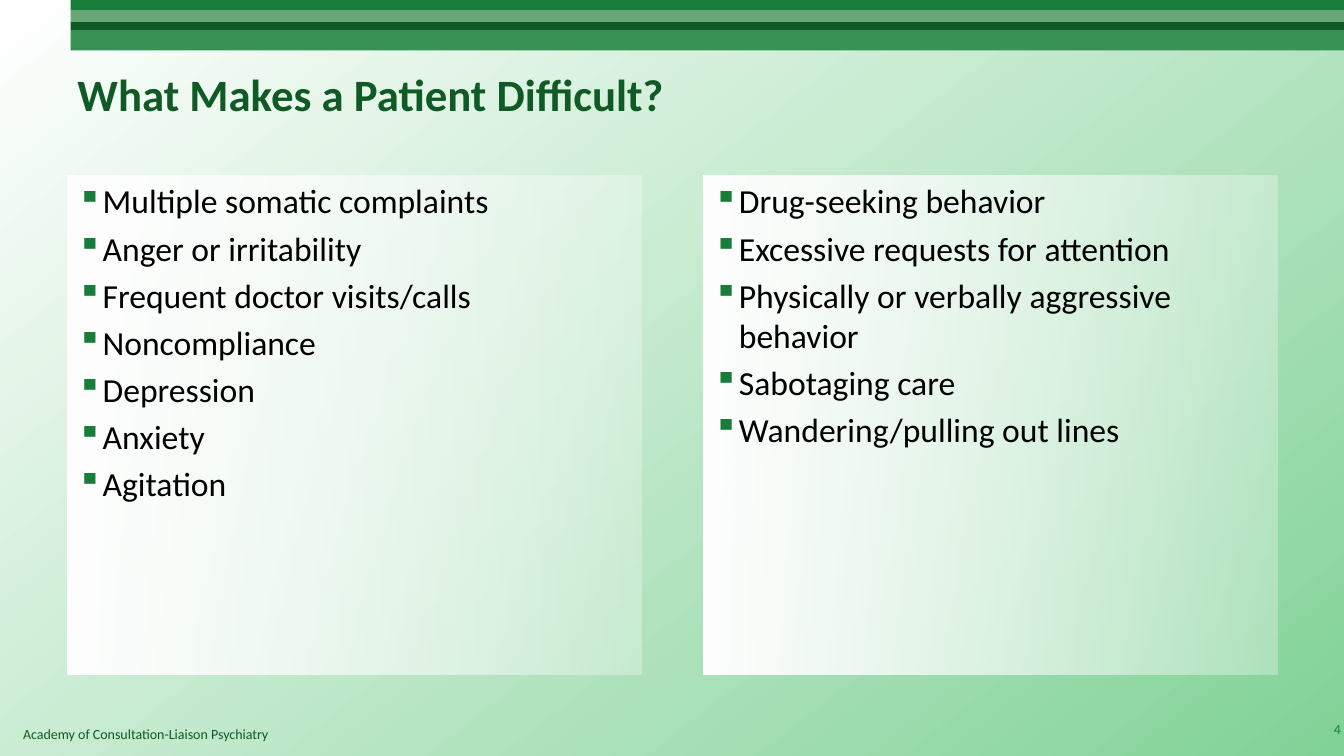
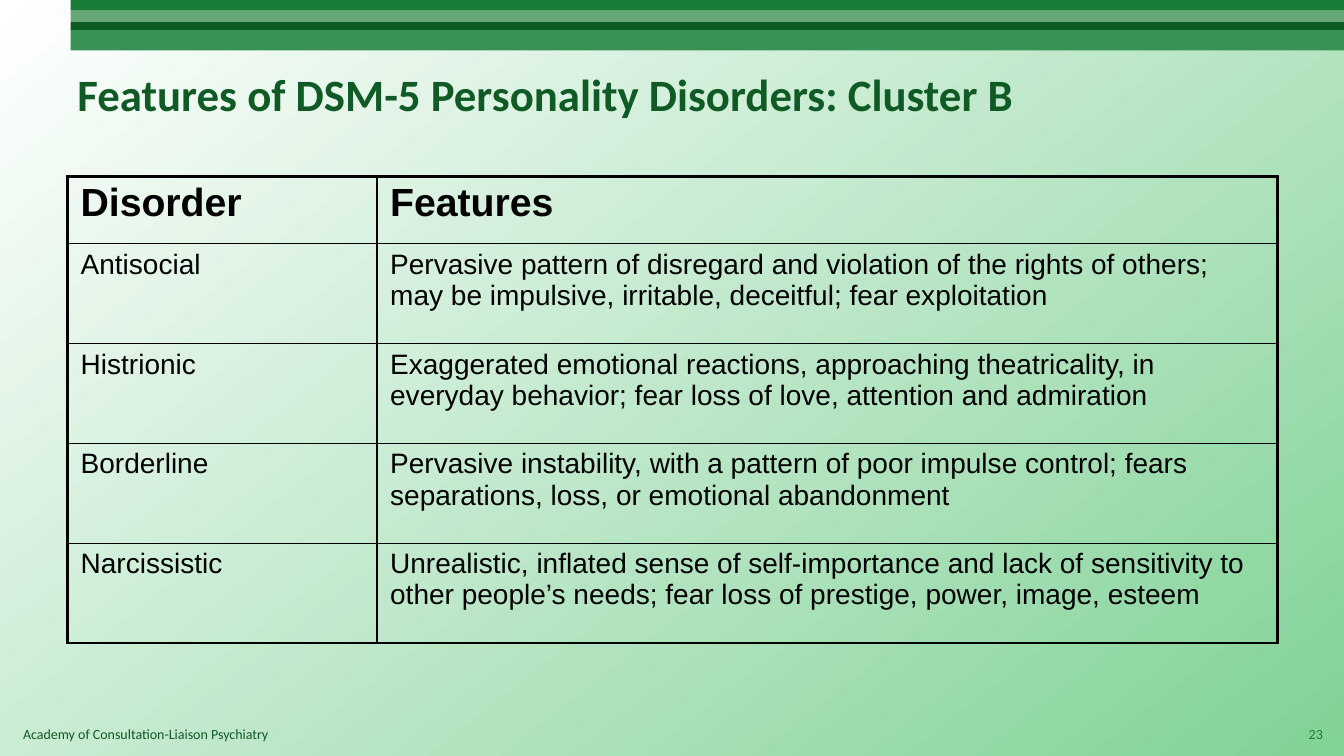
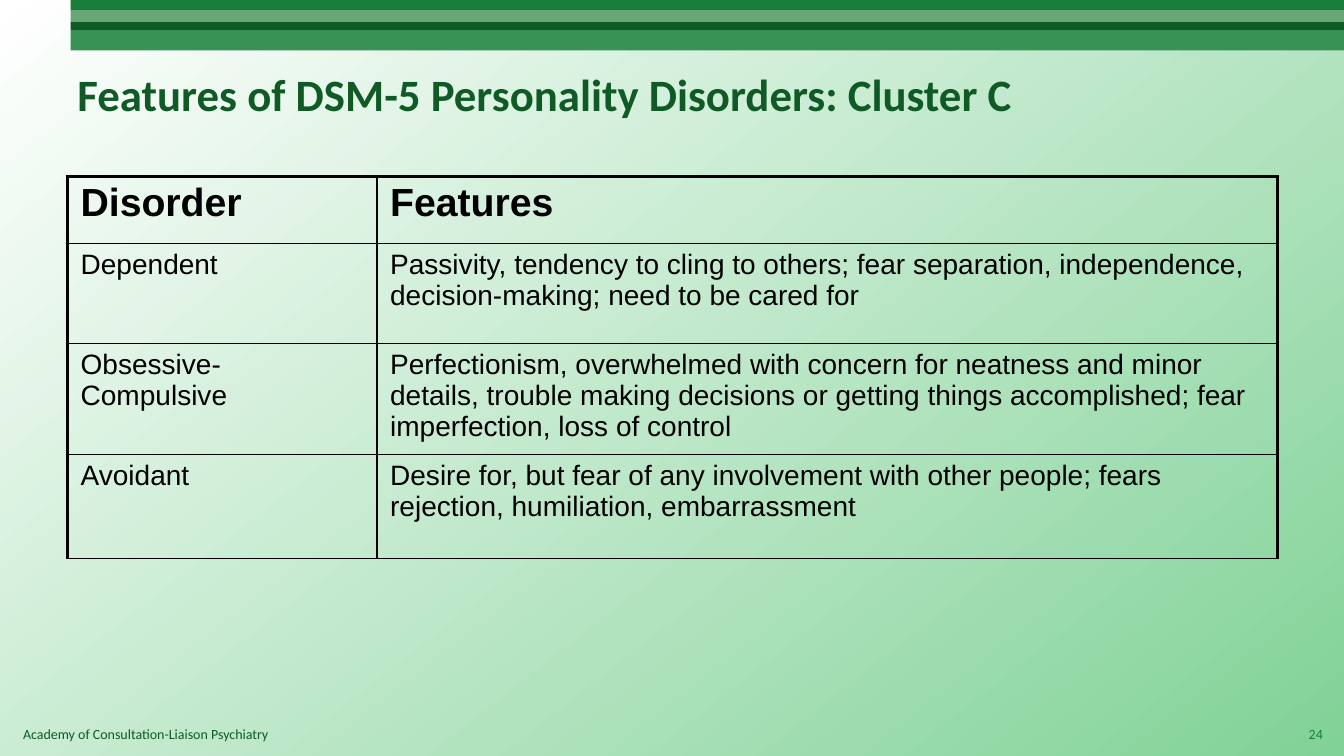
from dataclasses import dataclass
from typing import Any

import lxml.etree
import pptx
import pptx.dml.color
import pptx.enum.shapes
import pptx.enum.text
import pptx.oxml.ns
import pptx.util

Inches = pptx.util.Inches
Align = pptx.enum.text.PP_ALIGN
Anchor = pptx.enum.text.MSO_ANCHOR
qn = pptx.oxml.ns.qn


@dataclass(frozen=True)
class Theme:
    white: str = "FFFFFF"
    black: str = "000000"
    mint: str = "81D297"
    green: str = "177D38"
    sage: str = "66A677"
    forest: str = "105A25"
    fern: str = "389155"
    text_font: str = "Calibri"
    table_font: str = "Arial"
    title_size: int = 32
    bullet_size: int = 24
    header_size: int = 28
    cell_size: int = 20
    footer_size: int = 10
    thin_border: float = 1
    thick_border: float = 2.25


THEME = Theme()
SLIDE_WIDTH, SLIDE_HEIGHT = 13.33, 7.5
MARGIN = 0.67
CONTENT_WIDTH = 12
CONTENT_TOP = 1.75
BAND_LEFT = 0.7
PANEL_WIDTH, PANEL_HEIGHT = 5.69, 4.95
COLUMN_WIDTHS = (3.07, 8.93)
HEADER_HEIGHT = 0.67
FOOTER = "Academy of Consultation-Liaison Psychiatry"


@dataclass(frozen=True)
class Area:
    left: float
    top: float
    width: float
    height: float

    def lengths(self) -> tuple[pptx.util.Length, ...]:
        return tuple(Inches(value) for value in (self.left, self.top, self.width, self.height))


@dataclass(frozen=True)
class Style:
    size: int
    color: str
    font: str = THEME.text_font
    bold: bool = False


@dataclass(frozen=True)
class Band:
    height: float
    color: str


@dataclass(frozen=True)
class Disorder:
    name: str
    features: str
    row_height: float = 0.99


BANDS = (
    Band(0.1, THEME.green),
    Band(0.12, THEME.sage),
    Band(0.08, THEME.forest),
    Band(0.2, THEME.fern),
)
TITLE_STYLE = Style(THEME.title_size, THEME.forest, bold=True)
FOOTER_STYLE = Style(THEME.footer_size, THEME.forest)
NUMBER_STYLE = Style(THEME.footer_size, THEME.green)
BULLET_STYLE = Style(THEME.bullet_size, THEME.black)
HEADER_STYLE = Style(THEME.header_size, THEME.black, THEME.table_font, True)
CELL_STYLE = Style(THEME.cell_size, THEME.black, THEME.table_font)

DIFFICULT_TRAITS = (
    (
        "Multiple somatic complaints",
        "Anger or irritability",
        "Frequent doctor visits/calls",
        "Noncompliance",
        "Depression",
        "Anxiety",
        "Agitation",
    ),
    (
        "Drug-seeking behavior",
        "Excessive requests for attention",
        "Physically or verbally aggressive behavior",
        "Sabotaging care",
        "Wandering/pulling out lines",
    ),
)
CLUSTER_B = (
    Disorder("Antisocial", "Pervasive pattern of disregard and violation of the rights of others; "
             "may be impulsive, irritable, deceitful; fear exploitation"),
    Disorder("Histrionic", "Exaggerated emotional reactions, approaching theatricality, in "
             "everyday behavior; fear loss of love, attention and admiration"),
    Disorder("Borderline", "Pervasive instability, with a pattern of poor impulse control; fears "
             "separations, loss, or emotional abandonment"),
    Disorder("Narcissistic", "Unrealistic, inflated sense of self-importance and lack of sensitivity to "
             "other people’s needs; fear loss of prestige, power, image, esteem"),
)
CLUSTER_C = (
    Disorder("Dependent", "Passivity, tendency to cling to others; fear separation, independence, "
             "decision-making; need to be cared for"),
    Disorder("Obsessive-Compulsive", "Perfectionism, overwhelmed with concern for neatness and minor "
             "details, trouble making decisions or getting things accomplished; fear "
             "imperfection, loss of control", 1.03),
    Disorder("Avoidant", "Desire for, but fear of any involvement with other people; fears "
             "rejection, humiliation, embarrassment", 1.03),
)


def rgb(color: str) -> pptx.dml.color.RGBColor:
    return pptx.dml.color.RGBColor.from_string(color)


def add_color(parent: Any, tag: str, color: str) -> Any:
    holder = lxml.etree.SubElement(parent, qn(tag))
    return lxml.etree.SubElement(holder, qn("a:srgbClr"), val=color)


def style_paragraph(paragraph: Any, style: Style) -> None:
    for span in paragraph.runs:
        span.font.size = pptx.util.Pt(style.size)
        span.font.name = style.font
        span.font.bold = style.bold
        span.font.color.rgb = rgb(style.color)


def fill_gradient(fill: Any, start: str, end: str, angle: float) -> None:
    """Fill from start to end; the angle runs counter-clockwise in degrees."""
    fill.gradient()
    fill.gradient_angle = angle
    for stop, color, position in zip(fill.gradient_stops, (start, end), (0, 1)):
        stop.color.rgb = rgb(color)
        stop.position = position


def add_rectangle(page: Any, area: Area) -> Any:
    box = page.shapes.add_shape(pptx.enum.shapes.MSO_SHAPE.RECTANGLE, *area.lengths())
    box.shadow.inherit = False
    box.line.fill.background()
    return box


def add_text(page: Any, area: Area, text: str, style: Style, anchor: Any = Anchor.MIDDLE) -> Any:
    box = page.shapes.add_textbox(*area.lengths())
    frame = box.text_frame
    frame.word_wrap = True
    frame.vertical_anchor = anchor
    frame.text = text
    style_paragraph(frame.paragraphs[0], style)
    return box


def add_page(deck: Any, title: str, number: int, number_right: float = 13.12,
             number_top: float = 7.08) -> Any:
    """Add a slide with the shared background, bands, title, footer and number."""
    page = deck.slides.add_slide(deck.slide_layouts[6])
    fill_gradient(page.background.fill, THEME.white, THEME.mint, 308)
    top = 0.0
    for band in BANDS:
        box = add_rectangle(page, Area(BAND_LEFT, top, SLIDE_WIDTH - BAND_LEFT, band.height))
        box.fill.solid()
        box.fill.fore_color.rgb = rgb(band.color)
        top += band.height
    add_text(page, Area(0.13, 7.15, 9.25, 0.27), FOOTER, FOOTER_STYLE, Anchor.TOP)
    add_text(page, Area(MARGIN, 0.3, CONTENT_WIDTH, 1.25), title, TITLE_STYLE)
    width = 0.53
    box = add_text(page, Area(number_right - width, number_top, width, 0.4), str(number), NUMBER_STYLE)
    box.text_frame.margin_right = 0
    box.text_frame.paragraphs[0].alignment = Align.RIGHT
    return page


def add_bullet(paragraph: Any) -> None:
    properties = paragraph._p.get_or_add_pPr()
    properties.set("marL", str(Inches(0.25)))
    properties.set("indent", str(Inches(-0.25)))
    add_color(properties, "a:buClr", THEME.green)
    lxml.etree.SubElement(properties, qn("a:buChar"), char="▪")


def add_bullet_panel(page: Any, left: float, items: tuple[str, ...]) -> None:
    box = add_rectangle(page, Area(left, CONTENT_TOP - 0.01, PANEL_WIDTH, PANEL_HEIGHT))
    fill_gradient(box.fill, THEME.white, THEME.white, 0)
    last_color = box._element.spPr.findall(".//" + qn("a:srgbClr"))[-1]
    lxml.etree.SubElement(last_color, qn("a:alpha"), val="30000")
    frame = box.text_frame
    frame.word_wrap = True
    frame.vertical_anchor = Anchor.TOP
    frame.text = "\n".join(items)
    for index, paragraph in enumerate(frame.paragraphs):
        add_bullet(paragraph)
        paragraph.alignment = Align.LEFT
        if index:
            paragraph.space_before = pptx.util.Pt(0.2 * THEME.bullet_size)
        style_paragraph(paragraph, BULLET_STYLE)


def set_borders(cell: Any, left: float, right: float, top: float, bottom: float) -> None:
    properties = cell._tc.get_or_add_tcPr()
    for side, width in zip("LRTB", (left, right, top, bottom)):
        border = lxml.etree.SubElement(properties, qn(f"a:ln{side}"), w=str(pptx.util.Pt(width)))
        add_color(border, "a:solidFill", THEME.black)


def add_disorder_table(page: Any, disorders: tuple[Disorder, ...]) -> None:
    rows = (Disorder("Disorder", "Features", HEADER_HEIGHT), *disorders)
    area = Area(MARGIN, CONTENT_TOP, CONTENT_WIDTH, sum(row.row_height for row in rows))
    table = page.shapes.add_table(len(rows), len(COLUMN_WIDTHS), *area.lengths()).table
    table.first_row = table.horz_banding = False
    for column, width in zip(table.columns, COLUMN_WIDTHS):
        column.width = Inches(width)
    thin, thick = THEME.thin_border, THEME.thick_border
    for row_index, row in enumerate(rows):
        is_header = row_index == 0
        table.rows[row_index].height = Inches(row.row_height)
        for column_index, text in enumerate((row.name, row.features)):
            is_first = column_index == 0
            cell = table.cell(row_index, column_index)
            cell.margin_left = cell.margin_right = Inches(0.13)
            cell.margin_top = cell.margin_bottom = Inches(0.05)
            cell.text_frame.text = text
            style_paragraph(cell.text_frame.paragraphs[0], HEADER_STYLE if is_header else CELL_STYLE)
            set_borders(cell, thick if is_first else thin, thin if is_first else thick,
                        thick if is_header else thin, thin)
            cell.fill.background()


def main() -> None:
    deck = pptx.Presentation()
    deck.slide_width = Inches(SLIDE_WIDTH)
    deck.slide_height = Inches(SLIDE_HEIGHT)

    page = add_page(deck, "What Makes a Patient Difficult?", 4, 13.3, 7.03)
    for left, items in zip((MARGIN, MARGIN + CONTENT_WIDTH - PANEL_WIDTH), DIFFICULT_TRAITS):
        add_bullet_panel(page, left, items)

    for cluster, number, disorders in (("B", 23, CLUSTER_B), ("C", 24, CLUSTER_C)):
        page = add_page(deck, f"Features of DSM-5 Personality Disorders: Cluster {cluster}", number)
        add_disorder_table(page, disorders)

    deck.save("out.pptx")


if __name__ == "__main__":
    main()
